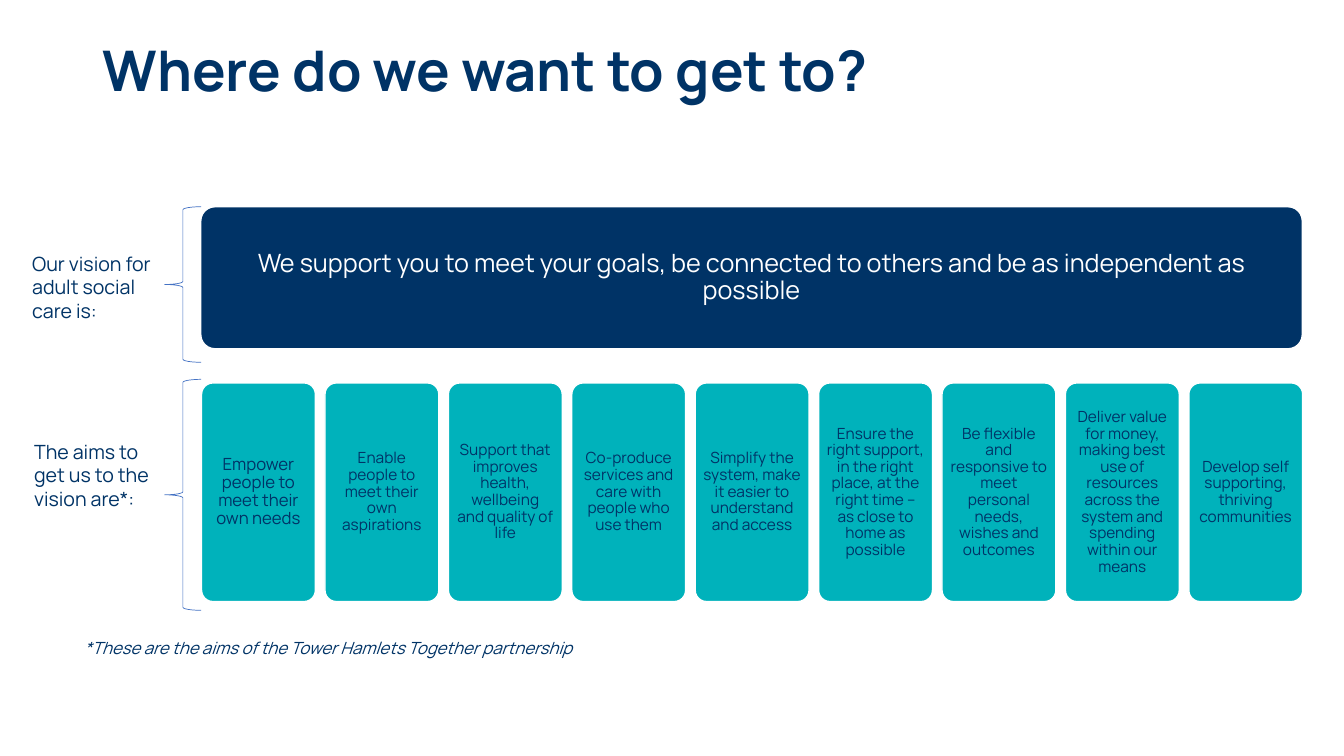
from pptx import Presentation
from pptx.dml.color import RGBColor
from pptx.enum.shapes import MSO_SHAPE
from pptx.enum.text import MSO_ANCHOR, PP_ALIGN
from pptx.util import Cm, Pt

ROUNDED = MSO_SHAPE.ROUNDED_RECTANGLE
BRACE = MSO_SHAPE.LEFT_BRACE
MIDDLE, TOP = MSO_ANCHOR.MIDDLE, MSO_ANCHOR.TOP
LEFT, CENTER = PP_ALIGN.LEFT, PP_ALIGN.CENTER

COLORS = {"navy": "003366", "teal": "00B2BB", "white": "FFFFFF", "blue": "4472C4"}

VISION = ("We support you to meet your goals, be connected to others "
          "and be as independent as possible")

AIMS = [
    "Empower people to meet their own needs",
    "Enable people to meet their own aspirations",
    "Support that improves health, wellbeing and quality of life",
    "Co-produce services and care with people who use them",
    "Simplify the system, make it easier to understand and access",
    "Ensure the right support, in the right place, at the right time "
    "– as close to home as possible",
    "Be flexible and responsive to meet personal needs, wishes and outcomes",
    "Deliver value for money, making best use of resources across the system "
    "and spending within our means",
    "Develop self supporting, thriving communities",
]


def color(name):
    return RGBColor.from_string(COLORS[name])


def write(sp, text, font="Manrope", size=12, ink="navy", bold=False, italic=False,
          align=LEFT, anchor=TOP, spacing=1.0, inset=None):
    tf = sp.text_frame
    tf.word_wrap = True
    tf.vertical_anchor = anchor
    if inset is not None:
        tf.margin_left = tf.margin_right = Cm(inset)
        tf.margin_top = tf.margin_bottom = Cm(inset)
    p = tf.paragraphs[0]
    p.alignment = align
    p.line_spacing = spacing
    r = p.add_run()
    r.text = text
    r.font.name = font
    r.font.size = Pt(size)
    r.font.bold = bold
    r.font.italic = italic
    r.font.color.rgb = color(ink)


class SlideBuilder:
    def __init__(self, slide, font):
        self.shapes = slide.shapes
        self.font = font

    def text(self, x, y, w, h, text, **fmt):
        sp = self.shapes.add_textbox(Cm(x), Cm(y), Cm(w), Cm(h))
        write(sp, text, font=self.font, **fmt)

    def card(self, x, y, w, h, fill, text, **fmt):
        sp = self.shapes.add_shape(ROUNDED, Cm(x), Cm(y), Cm(w), Cm(h))
        sp.adjustments[0] = 0.1
        sp.shadow.inherit = False
        sp.fill.solid()
        sp.fill.fore_color.rgb = color(fill)
        sp.line.color.rgb = color("white")
        sp.line.width = Pt(1)
        write(sp, text, font=self.font, align=CENTER, anchor=MIDDLE, spacing=0.9, **fmt)

    def brace(self, x, y, w, h):
        sp = self.shapes.add_shape(BRACE, Cm(x), Cm(y), Cm(w), Cm(h))
        sp.shadow.inherit = False
        sp.fill.background()
        sp.line.color.rgb = color("blue")
        sp.line.width = Pt(0.5)


def main():
    prs = Presentation()
    prs.slide_width, prs.slide_height = Cm(33.87), Cm(19.05)
    s = SlideBuilder(prs.slides.add_slide(prs.slide_layouts[6]), "Manrope")

    # Title
    s.text(2.34, 0, 27.15, 3.68, "Where do we want to get to?", size=40,
           bold=True, anchor=MIDDLE, spacing=0.9)

    # Vision banner
    s.card(5.06, 5.21, 27.76, 3.58, "navy", VISION, size=18, ink="white", inset=0.18)

    # Row of aims, the first in larger type
    for i, aim in enumerate(AIMS):
        s.card(5.08 + 3.11 * i, 9.65, 2.87, 5.51, "teal", aim,
               size=11 if i else 12, inset=0.12)

    # Braces and their labels
    s.brace(4.15, 5.21, 0.92, 3.92)
    s.brace(4.15, 9.56, 0.92, 5.82)
    s.text(0.56, 6.22, 3.53, 2.06, "Our vision for adult social care is:", size=14)
    s.text(0.61, 10.95, 3.53, 2.06, "The aims to get us to the vision are*:", size=14)

    # Footnote
    s.text(1.88, 15.95, 24.1, 0.76,
           "*These are the aims of the Tower Hamlets Together partnership",
           size=12, italic=True)

    prs.save("out.pptx")


if __name__ == "__main__":
    main()
